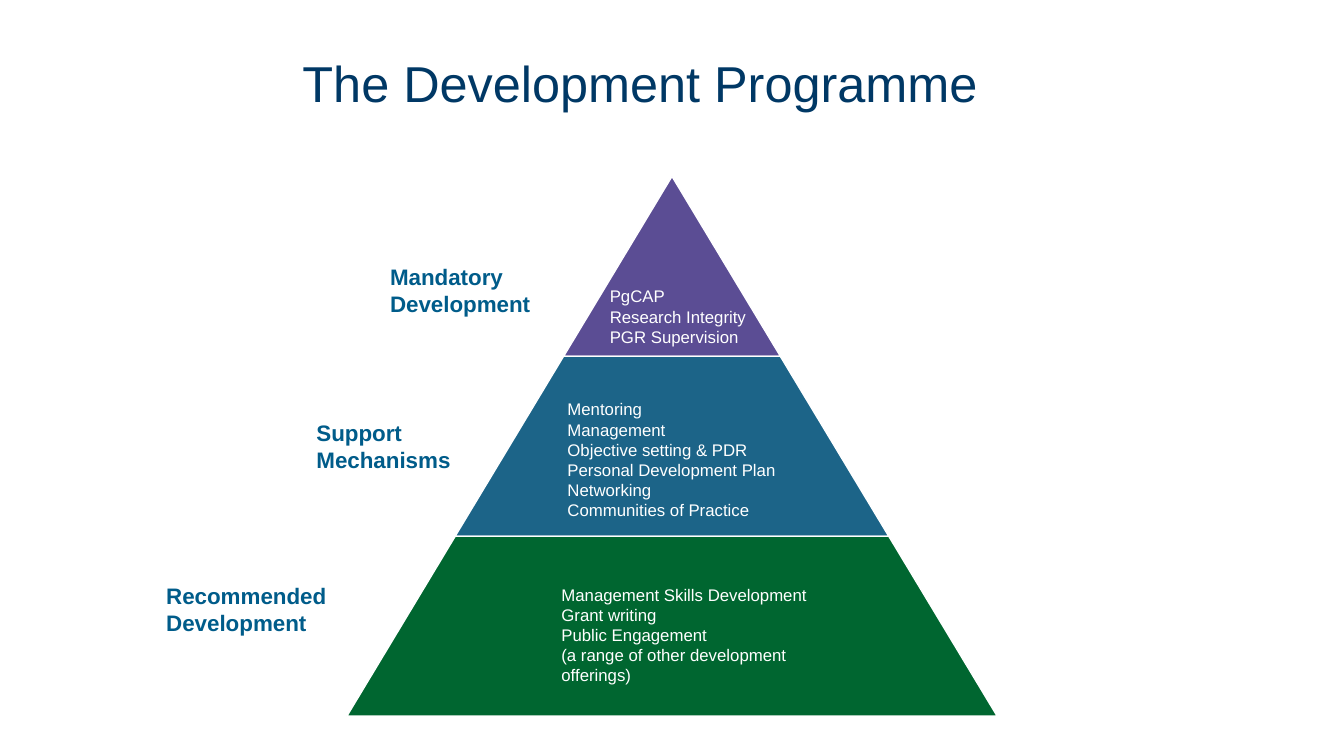
from pptx import Presentation
from pptx.dml.color import RGBColor
from pptx.enum.shapes import MSO_SHAPE
from pptx.enum.text import MSO_ANCHOR, MSO_AUTO_SIZE, PP_ALIGN
from pptx.util import Inches, Pt

WHITE, NAVY, BLUE = "FFFFFF", "003865", "005C8A"
CENTRE, TOP = 6.665, 1.75
TIER_HEIGHT, TIER_STEP = 1.785, 2.15

TIERS = [
    ("5B4D94",
     (3.77, 2.56, 1.7, 0.64), ["Mandatory Development"],
     (5.95, 2.79, 2.26, 0.71),
     ["PgCAP", "Research Integrity", "PGR Supervision"]),
    ("1C6488",
     (3.04, 4.11, 1.94, 0.64), ["Support", "Mechanisms"],
     (5.53, 3.91, 2.4, 1.31),
     ["Mentoring", "Management", "Objective setting & PDR",
      "Personal Development Plan", "Networking", "Communities of Practice"]),
    ("006630",
     (1.55, 5.73, 1.94, 0.64), ["Recommended", "Development"],
     (5.47, 5.75, 2.74, 1.31),
     ["Management Skills Development", "Grant writing", "Public Engagement",
      "(a range of other development offerings)"]),
]


def rgb(value):
    return RGBColor.from_string(value)


class SlideBuilder:
    font = "Arial"

    def __init__(self, prs):
        self.s = prs.slides.add_slide(prs.slide_layouts[5])

    def style(self, p, size, color, bold=False):
        p.alignment = PP_ALIGN.LEFT
        p.font.name = self.font
        p.font.size = Pt(size)
        p.font.bold = bold
        p.font.color.rgb = rgb(color)

    def title(self, text, box):
        sp = self.s.shapes.title
        sp.left, sp.top, sp.width, sp.height = map(Inches, box)
        tf = sp.text_frame
        tf.text = text
        tf.word_wrap = True
        tf.auto_size = MSO_AUTO_SIZE.NONE
        tf.vertical_anchor = MSO_ANCHOR.MIDDLE
        p = tf.paragraphs[0]
        p.line_spacing = 0.9
        self.style(p, 36, NAVY)

    def tier(self, level, color):
        width = TIER_STEP * level
        sp = self.s.shapes.add_shape(
            MSO_SHAPE.TRAPEZOID, Inches(CENTRE - width / 2),
            Inches(TOP + TIER_HEIGHT * (level - 1)),
            Inches(width), Inches(TIER_HEIGHT))
        sp.adjustments[0] = TIER_STEP / 2 / TIER_HEIGHT
        sp.shadow.inherit = False
        sp.fill.solid()
        sp.fill.fore_color.rgb = rgb(color)
        sp.line.color.rgb = rgb(WHITE)
        sp.line.width = Pt(1)

    def text(self, lines, box, size, color, bold=False):
        tf = self.s.shapes.add_textbox(*map(Inches, box)).text_frame
        tf.word_wrap = True
        tf.auto_size = MSO_AUTO_SIZE.SHAPE_TO_FIT_TEXT
        tf.text = "\n".join(lines)
        for p in tf.paragraphs:
            self.style(p, size, color, bold)


def main():
    prs = Presentation()
    prs.slide_width, prs.slide_height = Inches(13.33), Inches(7.5)
    slide = SlideBuilder(prs)
    slide.title("The Development Programme", (2.9, 0.13, 9.52, 1.45))
    for level, (color, label_box, label, items_box, items) in enumerate(TIERS, 1):
        slide.tier(level, color)
        slide.text(items, items_box, 12, WHITE)
        slide.text(label, label_box, 16, BLUE, bold=True)
    prs.save("out.pptx")


if __name__ == "__main__":
    main()
